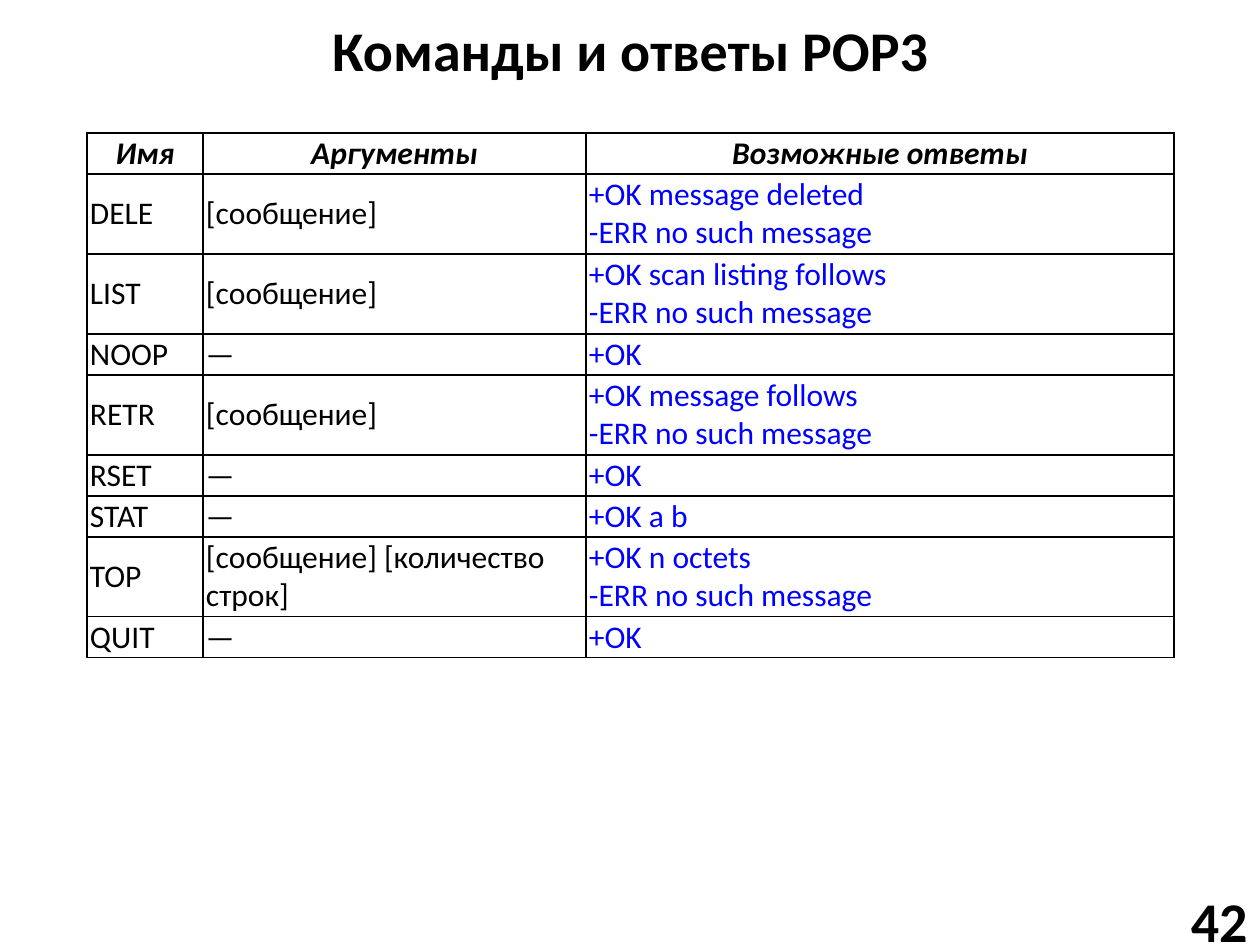
"""Build a slide with a table of POP3 commands and replies."""
from dataclasses import dataclass

import lxml.etree
import pptx
import pptx.dml.color
import pptx.enum.text
import pptx.oxml.ns
import pptx.util

PX_PER_INCH = 126
FONT = "Calibri"
BLACK = "000000"
BLUE = "0000FF"
ALIGN = pptx.enum.text.PP_ALIGN
MIDDLE = pptx.enum.text.MSO_ANCHOR.MIDDLE
COLUMN_WIDTHS = (116, 383, 588)
LINE_HEIGHT = 39
ROW_PADDING = 2
HEADINGS = ("Имя", "Аргументы", "Возможные ответы")
MESSAGE = "[сообщение]"
NO_ARGUMENT = "—"
ERROR = "-ERR no such message"


@dataclass(frozen=True)
class Command:
    """A command with its arguments and possible replies."""

    name: str
    arguments: str
    replies: tuple[str, ...]


COMMANDS = (
    Command("DELE", MESSAGE, ("+OK message deleted", ERROR)),
    Command("LIST", MESSAGE, ("+OK scan listing follows", ERROR)),
    Command("NOOP", NO_ARGUMENT, ("+OK",)),
    Command("RETR", MESSAGE, ("+OK message follows", ERROR)),
    Command("RSET", NO_ARGUMENT, ("+OK",)),
    Command("STAT", NO_ARGUMENT, ("+OK a b",)),
    Command("TOP", MESSAGE + " [количество строк]", ("+OK n octets", ERROR)),
    Command("QUIT", NO_ARGUMENT, ("+OK",)),
)


def px(n: int) -> int:
    """Turn pixels into EMU."""
    return pptx.util.Emu(round(n * 914400 / PX_PER_INCH))


def rgb(value: str) -> pptx.dml.color.RGBColor:
    """Turn a hex string into a colour."""
    return pptx.dml.color.RGBColor.from_string(value)


def write(tf, lines: tuple[str, ...], size: int, align, color: str = BLACK,
          bold: bool = False, italic: bool = False) -> None:
    """Write one paragraph per line into a text frame."""
    for i, line in enumerate(lines):
        p = tf.add_paragraph() if i else tf.paragraphs[0]
        p.alignment = align
        r = p.add_run()
        r.text = line
        r.font.name = FONT
        r.font.size = pptx.util.Pt(size)
        r.font.bold = bold
        r.font.italic = italic
        r.font.color.rgb = rgb(color)


def add_borders(cell) -> None:
    """Draw thin black lines on the four sides of a cell."""
    qn = pptx.oxml.ns.qn
    tc_pr = cell._tc.get_or_add_tcPr()
    for i, side in enumerate(("lnL", "lnR", "lnT", "lnB")):
        ln = lxml.etree.Element(qn(f"a:{side}"), w=str(pptx.util.Pt(1)))
        fill = lxml.etree.SubElement(ln, qn("a:solidFill"))
        lxml.etree.SubElement(fill, qn("a:srgbClr"), val=BLACK)
        tc_pr.insert(i, ln)


def fill_cell(cell, lines: tuple[str, ...], color: str, heading: bool) -> None:
    """Format a cell and write its lines."""
    cell.fill.background()
    cell.vertical_anchor = MIDDLE
    cell.margin_left = cell.margin_right = px(3)
    cell.margin_top = cell.margin_bottom = px(1)
    write(cell.text_frame, lines, 18, ALIGN.CENTER if heading else ALIGN.LEFT,
          color, heading, heading)
    add_borders(cell)


def add_command_table(s) -> None:
    """Add the table with its heading row and one row per command."""
    rows = [tuple((h,) for h in HEADINGS)]
    rows += [((c.name,), (c.arguments,), c.replies) for c in COMMANDS]
    heights = [LINE_HEIGHT * len(row[-1]) + ROW_PADDING for row in rows]
    table = s.shapes.add_table(
        len(rows), len(HEADINGS), px(87), px(133),
        px(sum(COLUMN_WIDTHS)), px(sum(heights))).table
    table.first_row = table.horz_banding = False
    for column, width in zip(table.columns, COLUMN_WIDTHS):
        column.width = px(width)
    for i, row in enumerate(rows):
        table.rows[i].height = px(heights[i])
        for j, lines in enumerate(row):
            is_reply = i > 0 and j == len(row) - 1
            fill_cell(table.cell(i, j), lines, BLUE if is_reply else BLACK, i == 0)


def add_title(s) -> None:
    """Place and write the title."""
    sp = s.shapes.title
    sp.left, sp.top, sp.width, sp.height = px(35), px(6), px(1191), px(87)
    sp.text_frame.vertical_anchor = MIDDLE
    write(sp.text_frame, ("Команды и ответы POP3",), 32, ALIGN.CENTER, bold=True)


def add_page_number(s) -> None:
    """Add the page number in the bottom right corner."""
    tf = s.shapes.add_textbox(px(1116), px(895), px(144), px(50)).text_frame
    tf.word_wrap = True
    tf.vertical_anchor = MIDDLE
    write(tf, ("42",), 32, ALIGN.RIGHT, bold=True)


def main() -> None:
    """Build and save the presentation."""
    prs = pptx.Presentation()
    prs.slide_width, prs.slide_height = px(1260), px(945)
    s = prs.slides.add_slide(prs.slide_layouts[5])
    add_title(s)
    add_page_number(s)
    add_command_table(s)
    prs.save("out.pptx")


if __name__ == "__main__":
    main()
